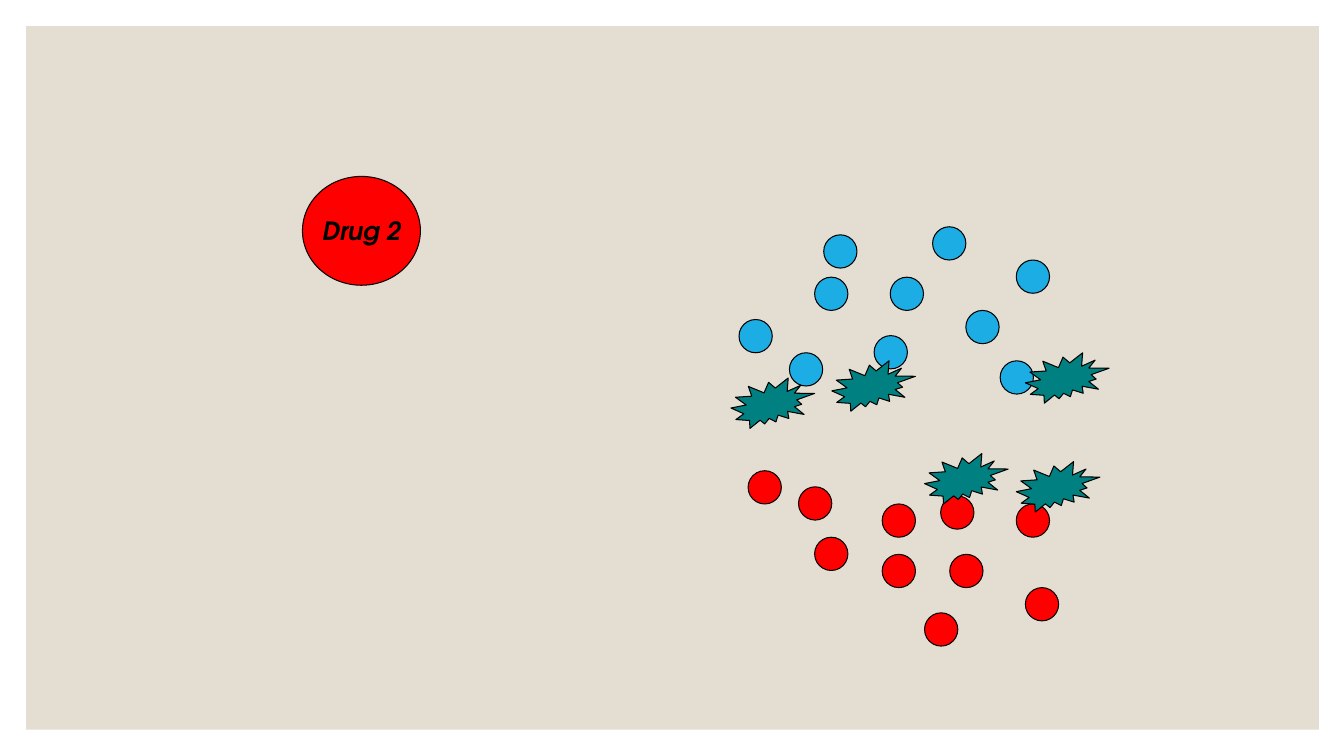
import dataclasses

import pptx
import pptx.dml.color
import pptx.enum.shapes
import pptx.enum.text
import pptx.util

Inches = pptx.util.Inches
Kind = pptx.enum.shapes.MSO_SHAPE

SAND, BLUE, RED, TEAL, BLACK = "E3DED1", "1CADE4", "FF0000", "008080", "000000"


@dataclasses.dataclass(frozen=True)
class Group:
    kind: int
    fill: str
    width: float
    height: float
    spots: tuple[tuple[float, float], ...]
    line: str | None = BLACK


def color(code: str) -> pptx.dml.color.RGBColor:
    return pptx.dml.color.RGBColor.from_string(code)


def draw(slide, group: Group) -> list:
    """Draw one shape at each spot of the group."""
    made = []
    for left, top in group.spots:
        shape = slide.shapes.add_shape(
            group.kind, Inches(left), Inches(top), Inches(group.width), Inches(group.height)
        )
        shape.shadow.inherit = False
        shape.fill.solid()
        shape.fill.fore_color.rgb = color(group.fill)
        if group.line:
            shape.line.color.rgb = color(group.line)
            shape.line.width = pptx.util.Pt(0.75)
        else:
            shape.line.fill.background()
        made.append(shape)
    return made


def label(shape, text: str, style: dict) -> None:
    """Write centred text in a shape."""
    frame = shape.text_frame
    frame.word_wrap = False
    frame.vertical_anchor = pptx.enum.text.MSO_ANCHOR.MIDDLE
    para = frame.paragraphs[0]
    para.alignment = pptx.enum.text.PP_ALIGN.CENTER
    run = para.add_run()
    run.text = text
    for name, value in style.items():
        setattr(run.font, name, value)
    run.font.color.rgb = color(BLACK)


PANEL = Group(Kind.RECTANGLE, SAND, 12.82, 6.98, ((0.26, 0.26),), None)
BLUES = Group(Kind.OVAL, BLUE, 0.33, 0.33, (
    (8.67, 3.33), (8.83, 2.75), (7.83, 3.5), (8.17, 2.33), (9.25, 2.25),
    (9.58, 3.08), (7.33, 3.17), (10.08, 2.58), (9.92, 3.58), (8.08, 2.75),
))
REDS = Group(Kind.OVAL, RED, 0.33, 0.33, (
    (7.92, 4.83), (8.08, 5.33), (7.42, 4.67), (8.75, 5), (8.75, 5.5),
    (9.33, 4.92), (9.42, 5.5), (9.17, 6.08), (10.17, 5.83), (10.08, 5),
))
BURSTS = Group(Kind.EXPLOSION2, TEAL, 0.83, 0.5, (
    (8.25, 3.58), (9.17, 4.5), (7.25, 3.75), (10.08, 4.58), (10.17, 3.5),
))
DRUG = Group(Kind.OVAL, RED, 1.17, 1.08, ((3, 1.75),))
STYLE = {"name": "TeX Gyre Adventor", "size": pptx.util.Pt(18), "bold": True, "italic": True}


def main() -> None:
    deck = pptx.Presentation()
    deck.slide_width, deck.slide_height = Inches(13.33), Inches(7.5)
    slide = deck.slides.add_slide(deck.slide_layouts[6])

    # Panel, then the particles with the bursts over them
    for group in (PANEL, BLUES, REDS, BURSTS):
        draw(slide, group)

    # Named drug
    drug, = draw(slide, DRUG)
    label(drug, "Drug 2", STYLE)

    deck.save("out.pptx")


if __name__ == "__main__":
    main()
